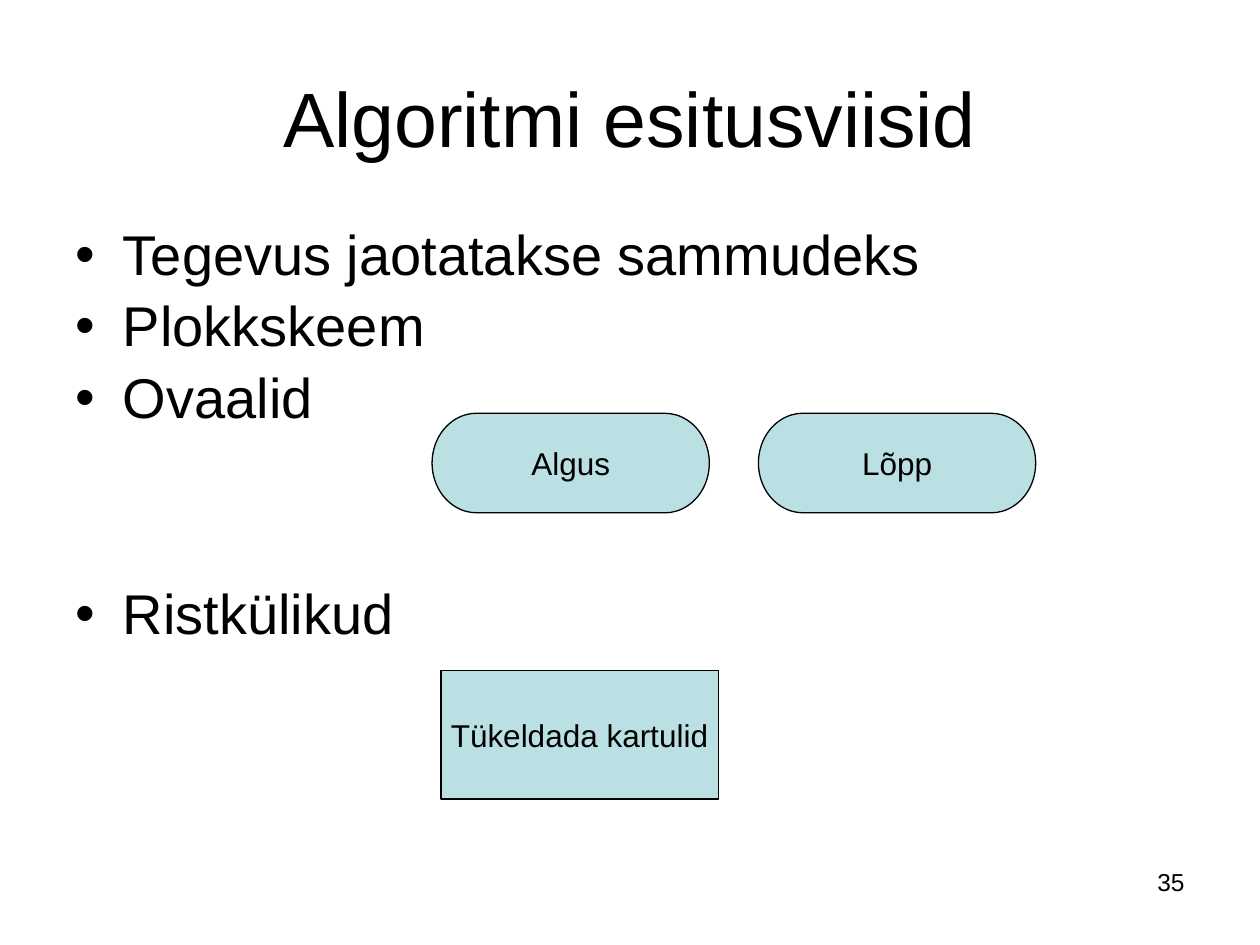
from pptx import Presentation
from pptx.dml.color import RGBColor
from pptx.enum.shapes import MSO_SHAPE
from pptx.enum.text import MSO_ANCHOR, MSO_AUTO_SIZE, PP_ALIGN
from pptx.util import Inches, Pt

TITLE = "Algoritmi esitusviisid"
BULLETS = ["Tegevus jaotatakse sammudeks", "Plokkskeem", "Ovaalid", "Ristkülikud"]
GAP_BEFORE = {"Ristkülikud": 89}
PAGE_NUMBER = "35"
BLOCK_WIDTH = 2.2
BLOCKS = [
    ("Algus", MSO_SHAPE.FLOWCHART_TERMINATOR, 3.43, 3.28, 0.79),
    ("Lõpp", MSO_SHAPE.FLOWCHART_TERMINATOR, 6.02, 3.28, 0.79),
    ("Tükeldada kartulid", MSO_SHAPE.FLOWCHART_PROCESS, 3.5, 5.32, 1.02),
]
BLACK = "000000"
PALE_TEAL = "BBE0E3"


def color(value):
    return RGBColor.from_string(value)


def place(shape, left, top, width, height):
    shape.left, shape.top = Inches(left), Inches(top)
    shape.width, shape.height = Inches(width), Inches(height)


def write(paragraph, text, size, alignment):
    paragraph.text = text
    paragraph.alignment = alignment
    paragraph.font.name = "Arial"
    paragraph.font.size = Pt(size)
    paragraph.font.color.rgb = color(BLACK)


def add_block(slide, text, kind, left, top, height):
    shape = slide.shapes.add_shape(
        kind, Inches(left), Inches(top), Inches(BLOCK_WIDTH), Inches(height)
    )
    shape.shadow.inherit = False
    shape.fill.solid()
    shape.fill.fore_color.rgb = color(PALE_TEAL)
    shape.line.color.rgb = color(BLACK)
    shape.line.width = Pt(0.75)
    frame = shape.text_frame
    frame.word_wrap = False
    frame.vertical_anchor = MSO_ANCHOR.MIDDLE
    write(frame.paragraphs[0], text, 18, PP_ALIGN.CENTER)


def main():
    presentation = Presentation()
    presentation.slide_width, presentation.slide_height = Inches(10), Inches(7.5)
    slide = presentation.slides.add_slide(presentation.slide_layouts[1])

    title = slide.shapes.title
    place(title, 0.5, 0.3, 9, 1.25)
    title.text_frame.auto_size = MSO_AUTO_SIZE.NONE
    title.text_frame.vertical_anchor = MSO_ANCHOR.MIDDLE
    write(title.text_frame.paragraphs[0], TITLE, 44, PP_ALIGN.CENTER)

    body = slide.placeholders[1]
    place(body, 0.5, 1.75, 9, 4.95)
    frame = body.text_frame
    frame.auto_size = MSO_AUTO_SIZE.NONE
    for index, text in enumerate(BULLETS):
        paragraph = frame.add_paragraph() if index else frame.paragraphs[0]
        write(paragraph, text, 32, PP_ALIGN.LEFT)
        paragraph.line_spacing = 0.9
        if text in GAP_BEFORE:
            paragraph.space_before = Pt(GAP_BEFORE[text])

    for block in BLOCKS:
        add_block(slide, *block)

    number = slide.shapes.add_textbox(
        Inches(7.17), Inches(6.83), Inches(2.33), Inches(0.52)
    )
    number.text_frame.word_wrap = True
    write(number.text_frame.paragraphs[0], PAGE_NUMBER, 14, PP_ALIGN.RIGHT)

    presentation.save("out.pptx")


if __name__ == "__main__":
    main()
